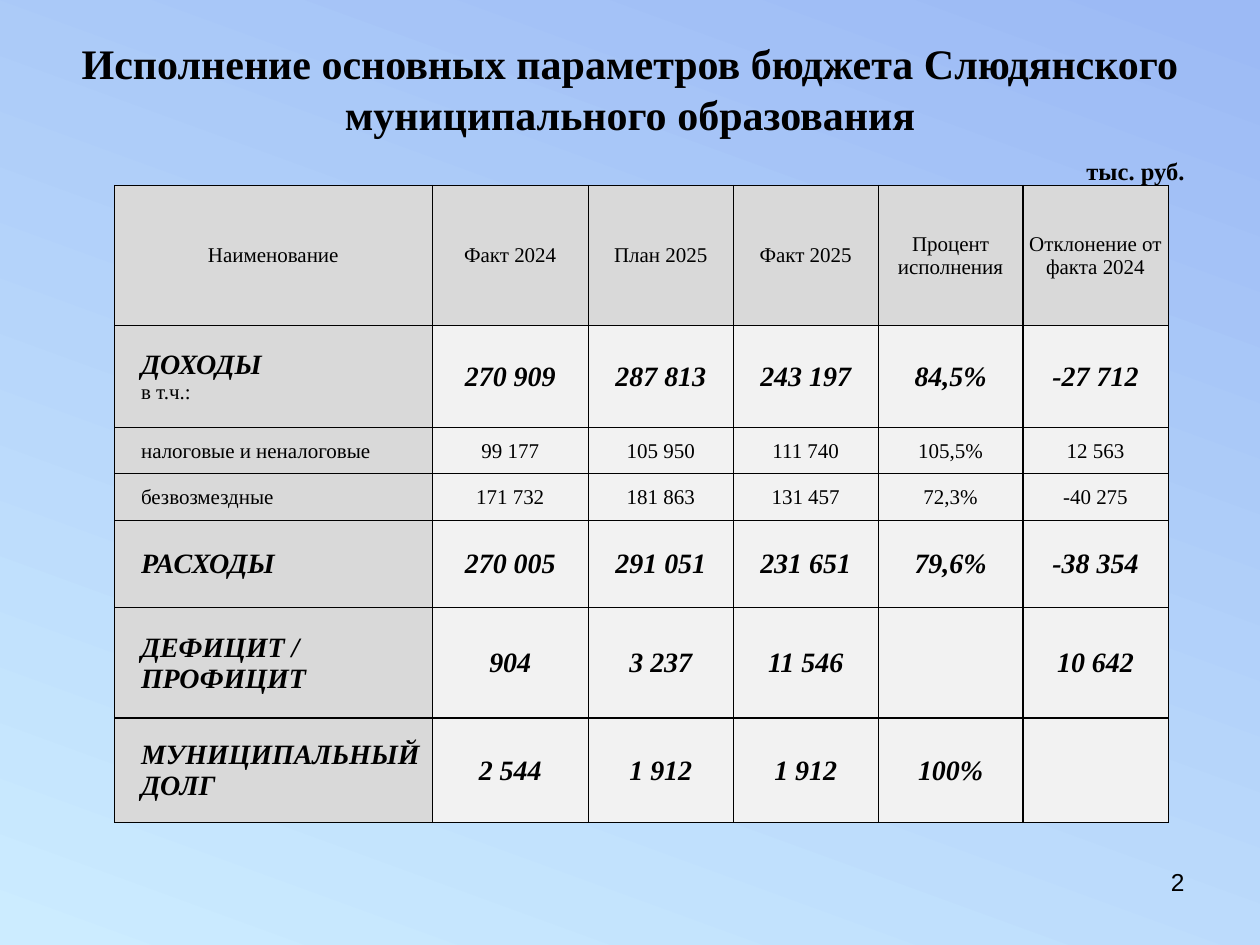
from typing import NamedTuple

from pptx import Presentation
from pptx.dml.color import RGBColor
from pptx.enum.text import MSO_ANCHOR as Anchor, PP_ALIGN as Align
from pptx.oxml.ns import qn
from pptx.oxml.xmlchemy import OxmlElement
from pptx.util import Inches, Pt

COLORS = {
    "text": "000000",
    "border": "000000",
    "label": "D9D9D9",
    "value": "F2F2F2",
    "sky_light": "CCECFF",
    "sky_deep": "9CBAF5",
}
SERIF = "Times New Roman"
COLUMN_WIDTHS = [2.52, 1.24, 1.15, 1.15, 1.15, 1.15]
HEADER_HEIGHT = 1.11
HEADERS = ["Наименование", "Факт 2024", "План 2025", "Факт 2025",
           "Процент исполнения", "Отклонение от факта 2024"]


class BudgetRow(NamedTuple):
    height: float
    labels: list[str]
    values: list[str]
    major: bool = True


ROWS = [
    BudgetRow(0.81, ["ДОХОДЫ", "в т.ч.:"],
              ["270 909", "287 813", "243 197", "84,5%", "-27 712"]),
    BudgetRow(0.37, ["налоговые и неналоговые"],
              ["99 177", "105 950", "111 740", "105,5%", "12 563"], False),
    BudgetRow(0.37, ["безвозмездные"],
              ["171 732", "181 863", "131 457", "72,3%", "-40 275"], False),
    BudgetRow(0.69, ["РАСХОДЫ"],
              ["270 005", "291 051", "231 651", "79,6%", "-38 354"]),
    BudgetRow(0.88, ["ДЕФИЦИТ /", "ПРОФИЦИТ"],
              ["904", "3 237", "11 546", "", "10 642"]),
    BudgetRow(0.83, ["МУНИЦИПАЛЬНЫЙ ДОЛГ"],
              ["2 544", "1 912", "1 912", "100%", ""]),
]


def color(name: str) -> RGBColor:
    return RGBColor.from_string(COLORS[name])


def write(para, text: str, *, size: float = 12, font: str = SERIF, bold: bool = False,
          italic: bool = False, align=Align.CENTER, indent: float = 0,
          before: float = 0) -> None:
    para.alignment = align
    para.space_before = Pt(before)
    if indent:
        para._p.get_or_add_pPr().set("marL", str(Inches(indent)))
    span = para.add_run()
    span.text = text
    span.font.name = font
    span.font.size = Pt(size)
    span.font.bold = bold
    span.font.italic = italic
    span.font.color.rgb = color("text")


def add_box(page, left: float, top: float, width: float, height: float):
    box = page.shapes.add_textbox(Inches(left), Inches(top), Inches(width), Inches(height))
    box.text_frame.word_wrap = True
    return box.text_frame


def add_borders(cell, widths: dict[str, float]) -> None:
    properties = cell._tc.get_or_add_tcPr()
    for position, (side, width) in enumerate(widths.items()):
        line = OxmlElement(f"a:ln{side}")
        line.set("w", str(Pt(width)))
        solid = OxmlElement("a:solidFill")
        tint = OxmlElement("a:srgbClr")
        tint.set("val", COLORS["border"])
        solid.append(tint)
        line.append(solid)
        properties.insert(position, line)


def style_cell(cell, fill: str, borders: dict[str, float]) -> None:
    cell.vertical_anchor = Anchor.MIDDLE
    cell.margin_left = cell.margin_top = cell.margin_right = Inches(0.01)
    cell.margin_bottom = 0
    cell.fill.solid()
    cell.fill.fore_color.rgb = color(fill)
    add_borders(cell, borders)


def fill_label(cell, row: BudgetRow) -> None:
    frame = cell.text_frame
    for index, label in enumerate(row.labels):
        para = frame.add_paragraph() if index else frame.paragraphs[0]
        strong = row.major and label.isupper()
        write(para, label, size=16 if strong else 12, bold=strong, italic=strong,
              align=Align.LEFT, indent=0.2)


def add_budget_table(page) -> None:
    heights = [HEADER_HEIGHT] + [row.height for row in ROWS]
    table = page.shapes.add_table(
        len(heights), len(COLUMN_WIDTHS), Inches(0.91), Inches(1.47),
        Inches(sum(COLUMN_WIDTHS)), Inches(sum(heights))).table
    table.first_row = table.horz_banding = False
    for column, width in zip(table.columns, COLUMN_WIDTHS):
        column.width = Inches(width)
    for line, height in zip(table.rows, heights):
        line.height = Inches(height)

    last_row, last_column = len(heights) - 1, len(COLUMN_WIDTHS) - 1
    for r in range(len(heights)):
        for c in range(len(COLUMN_WIDTHS)):
            outer = {"L": c == 0, "R": c == last_column, "T": r == 0, "B": r == last_row}
            style_cell(table.cell(r, c), "label" if r == 0 or c == 0 else "value",
                       {side: 0.5 if edge else 0.75 for side, edge in outer.items()})

    for c, header in enumerate(HEADERS):
        write(table.cell(0, c).text_frame.paragraphs[0], header)
    for r, row in enumerate(ROWS, start=1):
        fill_label(table.cell(r, 0), row)
        for c, value in enumerate(row.values, start=1):
            if value:
                write(table.cell(r, c).text_frame.paragraphs[0], value,
                      size=16 if row.major else 12, bold=row.major, italic=row.major)


def paint_background(page) -> None:
    fill = page.background.fill
    fill.gradient()
    fill.gradient_angle = 70
    for stop, name, position in zip(fill.gradient_stops, ("sky_light", "sky_deep"), (0, 0.99)):
        stop.color.rgb = color(name)
        stop.position = position


def add_title(page) -> None:
    frame = add_box(page, 0.5, 0.3, 9, 1.2)
    frame.margin_top = 0
    write(frame.paragraphs[0],
          "Исполнение основных параметров бюджета Слюдянского муниципального образования",
          size=24, bold=True)
    write(frame.add_paragraph(), "тыс. руб.", size=14, bold=True, align=Align.RIGHT, before=10)


def main() -> None:
    deck = Presentation()
    deck.slide_width, deck.slide_height = Inches(10), Inches(7.5)
    page = deck.slides.add_slide(deck.slide_layouts[6])
    paint_background(page)
    add_title(page)
    add_budget_table(page)
    number = add_box(page, 7.17, 6.83, 2.33, 0.52)
    write(number.paragraphs[0], "2", size=14, font="Arial", align=Align.RIGHT)
    deck.save("out.pptx")


if __name__ == "__main__":
    main()
